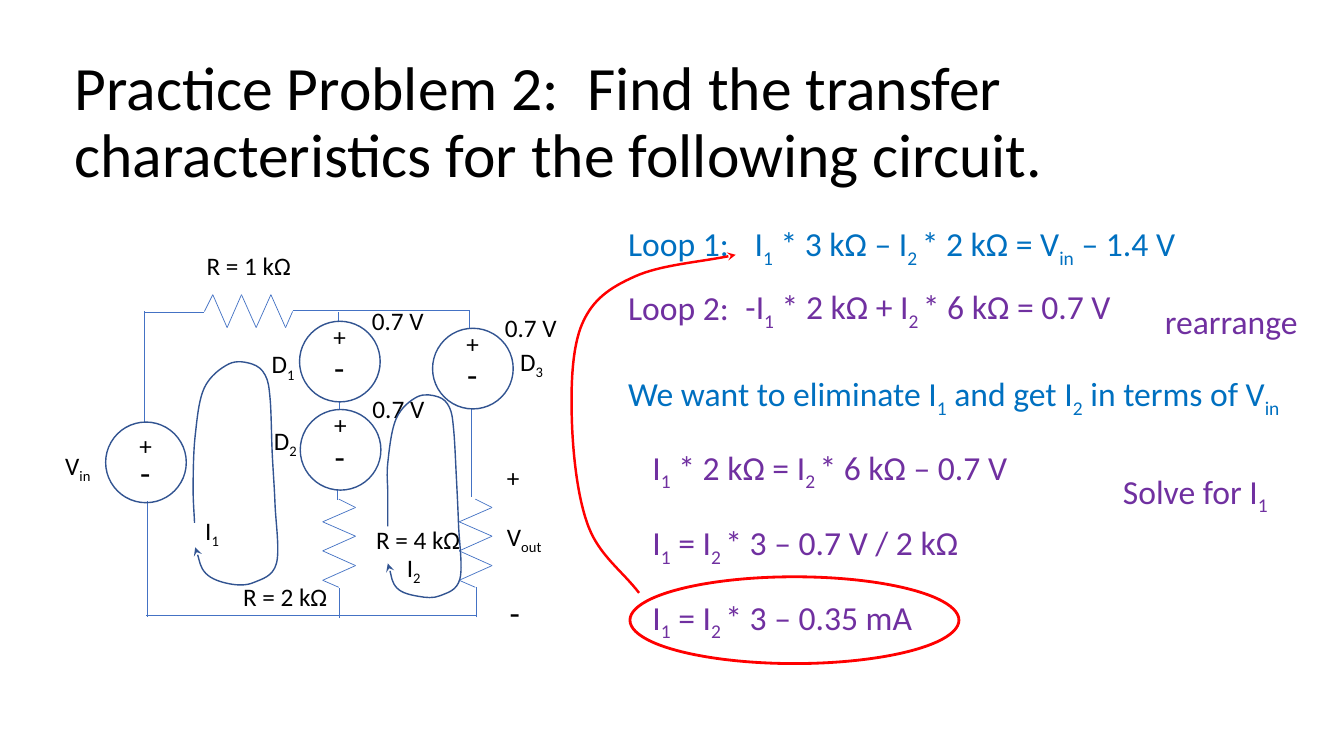
import pptx
import pptx.util
import pptx.dml.color
import pptx.enum.shapes
import pptx.enum.text
import pptx.oxml
import pptx.oxml.ns

Pt = pptx.util.Pt
COLORS = {"text": "000000", "wire": "4472C4", "outline": "325491", "white": "FFFFFF",
          "blue": "0070C0", "purple": "7030A0", "red": "FF0000"}
SMALL, LARGE = 18, 24

TITLE = "Practice Problem 2:  Find the transfer characteristics for the following circuit."
TITLE_BOX = (46, 36.5, 868, 104.5)

WIRES = [
    (103, 222.5, 103, 301.5), (105, 358, 105, 440.5), (103, 223, 146, 223),
    (209, 222, 335.5, 222), (104.5, 439.5, 340, 439.5), (337, 355, 337, 276),
    (242, 245, 242, 223), (242.5, 441.5, 242.5, 420), (242.5, 304.5, 242.5, 276),
    (241, 357, 241, 335.5), (335.5, 243.5, 335.5, 222), (340, 441, 340, 419),
]
ZIGZAG = [(0, 0), (6, 12), (16.25, -11.5), (26.5, 12), (37, -11.5),
          (47.5, 12), (58, -11.5), (63, 0)]
RESISTORS = [(146, 222.5, "across"), (242, 356.5, "down"), (339.5, 356.5, "down")]

SOURCE_SIZE = 57.6
SOURCES = [
    (75.5, 301.5, None, 2, 18, None),
    (309, 234.5, "white", -3.5, 15, "0.7 V"),
    (214, 229.5, "white", -3.5, 15, "0.7 V"),
    (214.5, 292.5, "white", -3.5, 15, "0.7 V"),
]

# Text between bars is subscript.
LABELS = [
    ("V|in", 39.5, 318, 38, SMALL, "text"),
    ("R = 1 kΩ", 140.5, 175.5, 85, SMALL, "text"),
    ("D|1", 187, 245.5, 33, SMALL, "text"),
    ("D|2", 188.5, 300, 33, SMALL, "text"),
    ("D|3", 364.5, 243.5, 33, SMALL, "text"),
    ("R = 2 kΩ", 166.5, 412, 85, SMALL, "text"),
    ("R = 4 kΩ", 261.5, 371, 85, SMALL, "text"),
    ("-", 357, 419, 26, LARGE, "text"),
    ("+", 355, 327, 26, SMALL, "text"),
    ("V|out", 355, 368.5, 43, SMALL, "text"),
    ("I|1", 139.5, 364.5, 33, SMALL, "text"),
    ("I|2", 283.5, 391, 33, SMALL, "text"),
    ("Loop 1:", 441.5, 156, 93, LARGE, "blue"),
    (" I|1| * 3 kΩ – I|2 |* 2 kΩ = V|in| – 1.4 V", 526.5, 156, 432, LARGE, "blue"),
    ("Loop 2:", 441.5, 201.5, 93, LARGE, "purple"),
    (" -I|1| * 2 kΩ + I|2 |* 6 kΩ = 0.7 V", 520, 201, 326, LARGE, "purple"),
    ("rearrange", 825, 211.5, 130, LARGE, "purple"),
    ("We want to eliminate I|1| and get I|2| in terms of V|in", 441.5, 263, 492, LARGE, "blue"),
    (" I|1| * 2 kΩ = I|2 |* 6 kΩ – 0.7 V", 453.5, 315.5, 326, LARGE, "purple"),
    ("Solve for I|1", 795, 332.5, 130, LARGE, "purple"),
    (" I|1| = I|2 |* 3 – 0.7 V / 2 kΩ", 453.5, 369.5, 326, LARGE, "purple"),
    (" I|1| = I|2 |* 3 – 0.35 mA", 453.5, 422.5, 222, LARGE, "purple"),
]

LOOP_ONE = [
    (139, 373.5), (138, 348), (139.5, 311), (146, 277), (163.5, 260),
    (180, 260), (189.5, 268), (193, 285), (194.5, 323.5), (196.5, 360),
    (197.5, 402.5), (181.5, 416), (164, 417), (147, 409.5), (139.5, 391)]
LOOP_TWO = [
    (277, 376), (277, 353), (277, 330.5), (283, 299), (298, 283.5),
    (313, 283.5), (321, 291), (324, 306.5), (326, 341.5), (327.5, 374.5),
    (328.5, 413.5), (314.5, 425.5), (299, 426), (283.5, 420), (277, 402.5)]
SUBSTITUTION = [(456.5, 423.5), (420.5, 376.5), (408.5, 300),
                (416, 231), (453.5, 197.5), (525.5, 182)]
ARROWS = [(LOOP_ONE, "outline", 1), (LOOP_TWO, "outline", 1), (SUBSTITUTION, "red", 1.75)]
RESULT_OVAL = (450, 412, 235, 62)


def rgb(name):
    return pptx.dml.color.RGBColor.from_string(COLORS[name])


def apply_format(target, values):
    for name, value in values.items():
        setattr(target, name, value)


def set_line(shape, color, width):
    shape.line.color.rgb = rgb(color)
    shape.line.width = Pt(width)


def add_wire(slide, *ends):
    wire = slide.shapes.add_connector(
        pptx.enum.shapes.MSO_CONNECTOR.STRAIGHT, *map(Pt, ends))
    set_line(wire, "wire", 0.5)
    pptx.oxml.ns.qn("a:effectLst")
    wire._element.spPr.append(
        pptx.oxml.parse_xml("<a:effectLst %s/>" % pptx.oxml.ns.nsdecls("a")))


def add_resistor(slide, left, top, direction):
    if direction == "across":
        points = [(left + along, top - side) for along, side in ZIGZAG]
    else:
        points = [(left + side, top + along) for along, side in ZIGZAG]
    for start, end in zip(points, points[1:]):
        add_wire(slide, *start, *end)


def add_oval(slide, box, color, width, fill=None):
    oval = slide.shapes.add_shape(pptx.enum.shapes.MSO_SHAPE.OVAL, *map(Pt, box))
    oval.shadow.inherit = False
    if fill:
        oval.fill.solid()
        oval.fill.fore_color.rgb = rgb(fill)
    else:
        oval.fill.background()
    set_line(oval, color, width)


def add_label(slide, text, left, top, width, size=SMALL, color="text"):
    label = slide.shapes.add_textbox(Pt(left), Pt(top), Pt(width), Pt(size * 1.2 + 7.2))
    label.text_frame.word_wrap = True
    paragraph = label.text_frame.paragraphs[0]
    for index, part in enumerate(text.split("|")):
        run = paragraph.add_run()
        run.text = part
        apply_format(run.font, {"name": "Calibri", "size": Pt(size)})
        run.font.color.rgb = rgb(color)
        if index % 2:
            run.font._element.set("baseline", "-25000")


def add_source(slide, left, top, fill, plus_drop, minus_drop, voltage):
    add_oval(slide, (left, top, SOURCE_SIZE, SOURCE_SIZE), "outline", 1, fill)
    add_label(slide, "+", left + 17, top + plus_drop, 26)
    add_label(slide, "-", left + 17.5, top + minus_drop, 26, LARGE)
    if voltage:
        add_label(slide, voltage, left + 44.5, top - 15, 52)


def smooth_points(anchors):
    last = len(anchors) - 1
    tangents = []
    for index in range(last + 1):
        before, after = max(index - 1, 0), min(index + 1, last)
        tangents.append([(b - a) / (3 * (after - before))
                         for a, b in zip(anchors[before], anchors[after])])
    points = []
    for index in range(last):
        start, end = anchors[index], anchors[index + 1]
        points += [tuple(a + t for a, t in zip(start, tangents[index])),
                   tuple(a - t for a, t in zip(end, tangents[index + 1])), end]
    return points


def add_curved_arrow(slide, anchors, color, width):
    builder = slide.shapes.build_freeform(*map(Pt, anchors[0]))
    builder.add_line_segments([(Pt(x), Pt(y)) for x, y in smooth_points(anchors)], close=False)
    curve = builder.convert_to_shape()
    curve.shadow.inherit = False
    curve.fill.background()
    set_line(curve, color, width)
    qn, nsdecls = pptx.oxml.ns.qn, pptx.oxml.ns.nsdecls("a")
    segments = list(curve._element.iter(qn("a:lnTo")))
    for first in range(0, len(segments), 3):
        bezier = pptx.oxml.parse_xml("<a:cubicBezTo %s/>" % nsdecls)
        segments[first].addprevious(bezier)
        for segment in segments[first:first + 3]:
            bezier.append(segment[0])
            segment.getparent().remove(segment)
    curve._element.spPr.find(qn("a:ln")).append(
        pptx.oxml.parse_xml('<a:tailEnd %s type="stealth"/>' % nsdecls))


def add_title(slide):
    title = slide.shapes.title
    apply_format(title, dict(zip(("left", "top", "width", "height"), map(Pt, TITLE_BOX))))
    title.text_frame.text = TITLE
    apply_format(title.text_frame, {
        "word_wrap": True, "auto_size": pptx.enum.text.MSO_AUTO_SIZE.NONE,
        "vertical_anchor": pptx.enum.text.MSO_ANCHOR.MIDDLE})
    paragraph = title.text_frame.paragraphs[0]
    apply_format(paragraph, {"alignment": pptx.enum.text.PP_ALIGN.LEFT, "line_spacing": 0.9})
    apply_format(paragraph.runs[0].font, {"name": "Calibri", "size": Pt(44)})
    paragraph.runs[0].font.color.rgb = rgb("text")


def main():
    presentation = pptx.Presentation()
    apply_format(presentation, {"slide_width": Pt(960), "slide_height": Pt(540)})
    slide = presentation.slides.add_slide(presentation.slide_layouts[5])
    add_title(slide)
    for wire in WIRES:
        add_wire(slide, *wire)
    for resistor in RESISTORS:
        add_resistor(slide, *resistor)
    for source in SOURCES:
        add_source(slide, *source)
    for label in LABELS:
        add_label(slide, *label)
    add_oval(slide, RESULT_OVAL, "red", 2)
    for arrow in ARROWS:
        add_curved_arrow(slide, *arrow)
    presentation.save("out.pptx")


if __name__ == "__main__":
    main()
